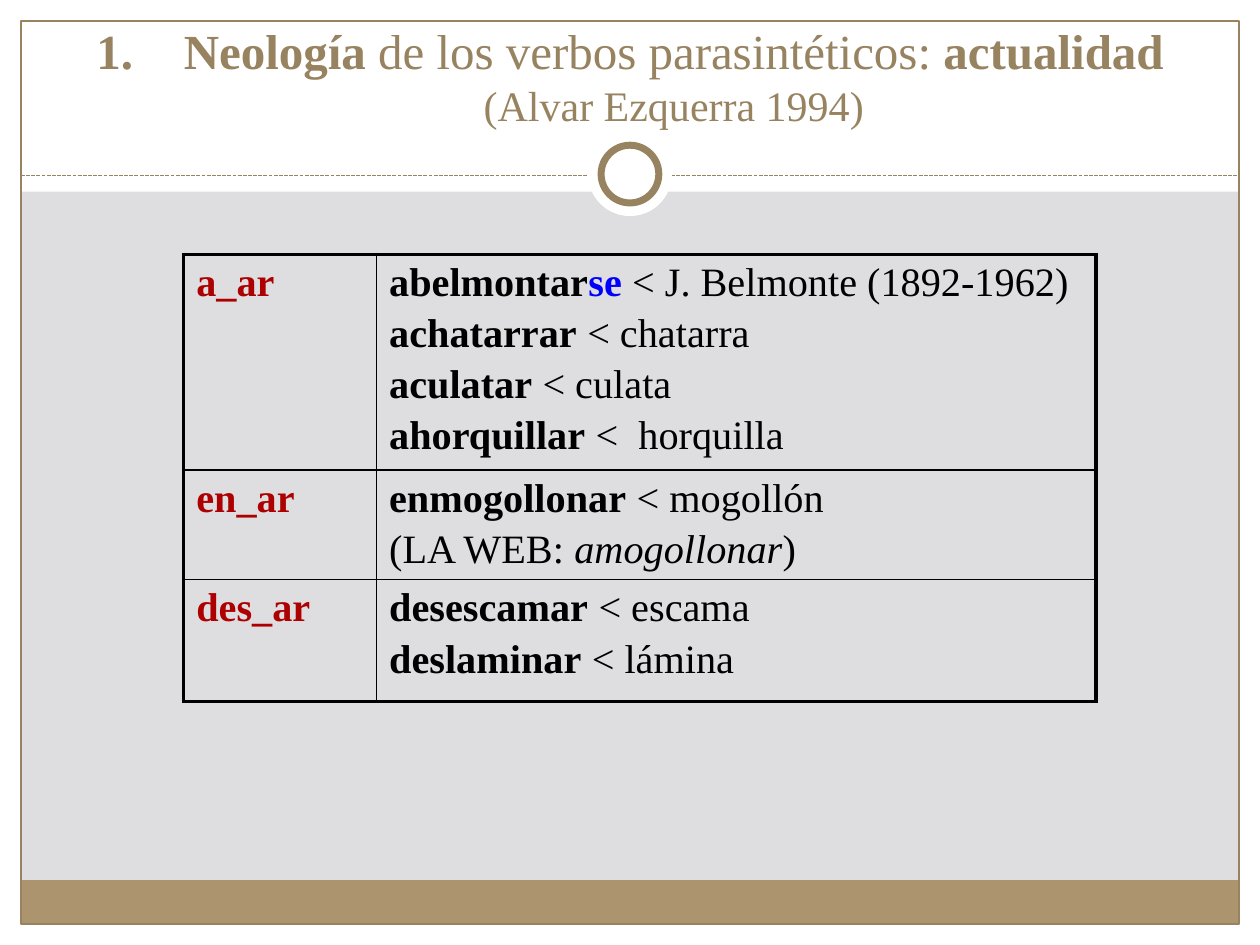
from dataclasses import dataclass
from typing import Optional

from lxml import etree
from pptx import Presentation
from pptx import util as u
from pptx.dml.color import RGBColor
from pptx.enum import dml, shapes, text
from pptx.oxml import ns

Pt = u.Pt
FONT = "Times New Roman"
TAN, WHITE, BLACK, RED, BLUE = "988361", "FFFFFF", "000000", "AD0101", "0000FF"


@dataclass
class Box:
    x: float
    y: float
    w: float
    h: float
    fill: Optional[str] = None
    line: Optional[float] = None
    kind: shapes.MSO_SHAPE = shapes.MSO_SHAPE.RECTANGLE


@dataclass
class Run:
    text: str
    bold: bool = False
    italic: bool = False
    color: str = BLACK
    size: float = 23


@dataclass
class Row:
    height: float
    pattern: str
    verbs: list[list[Run]]


def rgb(value: str) -> RGBColor:
    return RGBColor.from_string(value)


def child(parent, tag: str, **attrs: str):
    return etree.SubElement(parent, ns.qn(tag), attrs)


def add_run(p, run: Run) -> None:
    r = p.add_run()
    r.text = run.text
    r.font.name, r.font.size = FONT, Pt(run.size)
    r.font.bold, r.font.italic = run.bold, run.italic
    r.font.color.rgb = rgb(run.color)


def add_box(s, box: Box) -> None:
    sp = s.shapes.add_shape(box.kind, Pt(box.x), Pt(box.y), Pt(box.w), Pt(box.h))
    sp.shadow.inherit = False
    if box.fill:
        sp.fill.solid()
        sp.fill.fore_color.rgb = rgb(box.fill)
    else:
        sp.fill.background()
    if box.line:
        sp.line.color.rgb = rgb(TAN)
        sp.line.width = Pt(box.line)
    else:
        sp.line.fill.background()


def add_divider(s, x1: float, x2: float, y: float) -> None:
    sp = s.shapes.add_connector(shapes.MSO_CONNECTOR.STRAIGHT, Pt(x1), Pt(y), Pt(x2), Pt(y))
    sp.line.color.rgb = rgb(TAN)
    sp.line.width = Pt(0.75)
    sp.line.dash_style = dml.MSO_LINE.SQUARE_DOT
    child(sp._element.spPr, "a:effectLst")


def set_title(s, runs: list[Run], subtitle: Run) -> None:
    sp = s.shapes.title
    sp.left, sp.top, sp.width, sp.height = Pt(24), Pt(18), Pt(672), Pt(60)
    s.shapes._spTree.append(sp._element)
    tf = sp.text_frame
    tf.auto_size = text.MSO_AUTO_SIZE.NONE
    tf.vertical_anchor = text.MSO_ANCHOR.BOTTOM
    p = tf.paragraphs[0]
    p.alignment = text.PP_ALIGN.CENTER
    pPr = p._p.get_or_add_pPr()
    pPr.set("marL", str(Pt(50)))
    pPr.set("indent", str(-Pt(50)))
    child(pPr, "a:buFont", typeface="+mj-lt")
    child(pPr, "a:buAutoNum", type="arabicPeriod")
    for run in runs:
        add_run(p, run)
    p.add_line_break()
    add_run(p, subtitle)


def set_borders(cell, widths: dict[str, float]) -> None:
    tcPr = cell._tc.get_or_add_tcPr()
    for side, width in widths.items():
        ln = child(tcPr, f"a:ln{side}", w=str(Pt(width)))
        child(child(ln, "a:solidFill"), "a:srgbClr", val=BLACK)


def fill_cell(cell, lines: list[list[Run]]) -> None:
    tf = cell.text_frame
    for i, runs in enumerate(lines):
        p = tf.add_paragraph() if i else tf.paragraphs[0]
        p.space_before = Pt(3.6)
        for run in runs:
            add_run(p, run)


def add_verb_table(s, x: float, y: float, widths: list[float], rows: list[Row]) -> None:
    height = sum(row.height for row in rows)
    frame = s.shapes.add_table(len(rows), len(widths), Pt(x), Pt(y), Pt(sum(widths)), Pt(height))
    table = frame.table
    table.first_row = table.horz_banding = False
    for column, width in zip(table.columns, widths):
        column.width = Pt(width)
    last_row, last_col = len(rows) - 1, len(widths) - 1
    for i, row in enumerate(rows):
        table.rows[i].height = Pt(row.height)
        for j, lines in enumerate([[[Run(row.pattern, True, color=RED)]], row.verbs]):
            cell = table.cell(i, j)
            outer = {"L": j == 0, "R": j == last_col, "T": i == 0, "B": i == last_row}
            set_borders(cell, {side: 2.25 if edge else 1 for side, edge in outer.items()})
            cell.fill.background()
            fill_cell(cell, lines)


def derived(verb: str, base: str) -> list[Run]:
    return [Run(verb, True), Run(f" < {base}")]


OVAL = shapes.MSO_SHAPE.OVAL
FRAME = [
    Box(0, 528, 720, 12, WHITE),
    Box(0, 0, 720, 109.5, WHITE),
    Box(0, 0, 12, 540, WHITE),
    Box(708, 0, 12, 540, WHITE),
    Box(12, 503, 696, 25, "AC956E"),
    Box(12, 12, 696, 516, line=0.75),
]
RING = [
    Box(336, 75.5, 48, 48, WHITE, kind=OVAL),
    Box(343.5, 83, 33, 33, WHITE, 4, OVAL),
]
TITLE = [
    Run("Neología", True, color=TAN, size=28),
    Run(" de los verbos parasintéticos: ", color=TAN, size=28),
    Run("actualidad", True, color=TAN, size=28),
]
ROWS = [
    Row(123.2, "a_ar", [
        [Run("abelmontar", True), Run("se", True, color=BLUE), Run(" < J. Belmonte (1892-1962)")],
        derived("achatarrar", "chatarra"),
        derived("aculatar", "culata"),
        derived("ahorquillar", " horquilla"),
    ]),
    Row(62.8, "en_ar", [
        derived("enmogollonar", "mogollón"),
        [Run("(LA WEB: "), Run("amogollonar", italic=True), Run(")")],
    ]),
    Row(69.6, "des_ar", [
        derived("desescamar", "escama"),
        derived("deslaminar", "lámina"),
    ]),
]


def main() -> None:
    prs = Presentation()
    prs.slide_width, prs.slide_height = Pt(720), Pt(540)
    s = prs.slides.add_slide(prs.slide_layouts[5])
    s.background.fill.solid()
    s.background.fill.fore_color.rgb = rgb("DEDEE0")
    for box in FRAME:
        add_box(s, box)
    add_divider(s, 12, 708, 100.5)
    for box in RING:
        add_box(s, box)
    set_title(s, TITLE, Run("(Alvar Ezquerra 1994)", color=TAN, size=24))
    add_verb_table(s, 105, 145.3, [110.2, 411.2], ROWS)
    prs.save("out.pptx")


if __name__ == "__main__":
    main()
